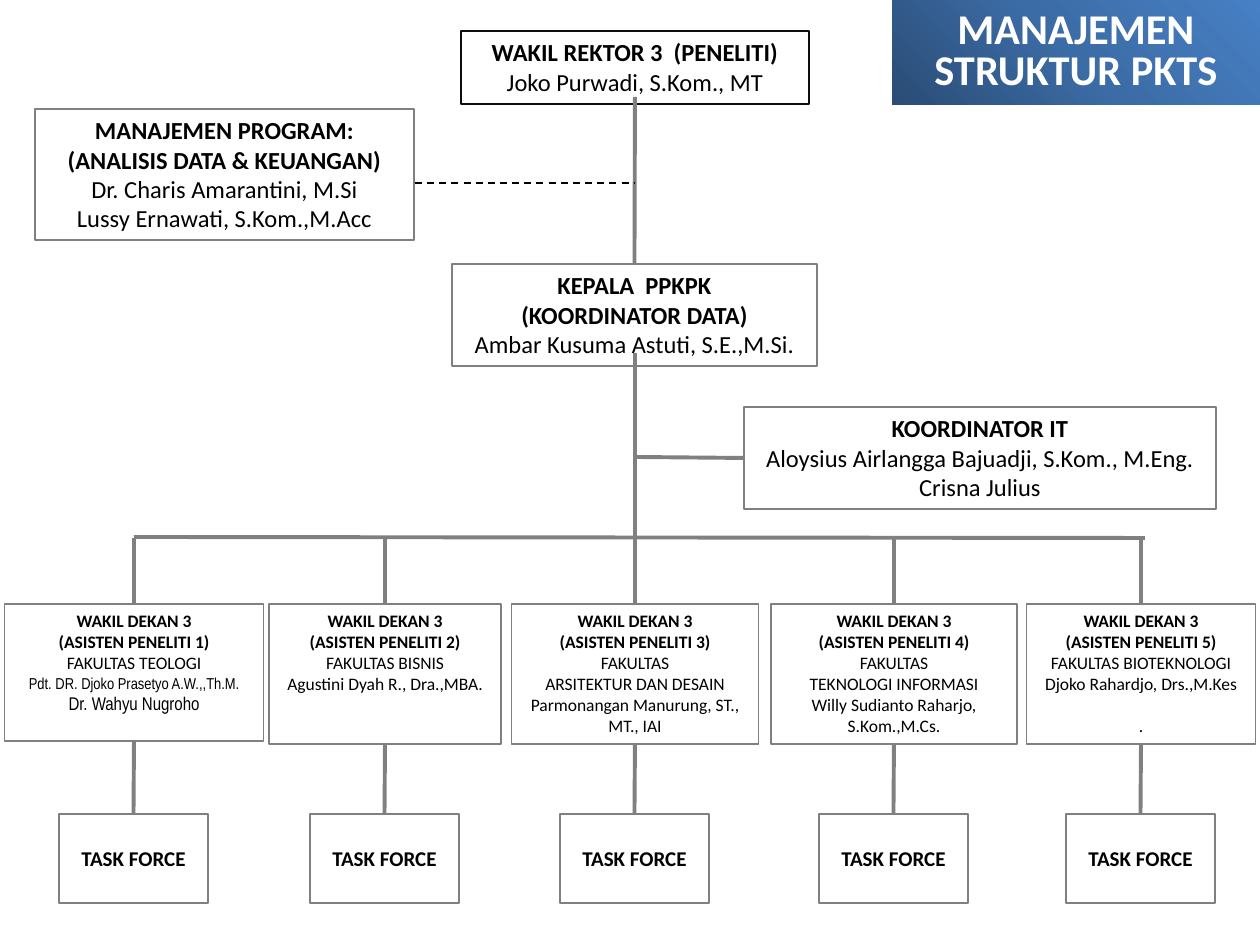
"""Builds the organisation chart of the PKTS management structure."""
from lxml import etree
from pptx import Presentation
from pptx import util as u
from pptx.dml.color import RGBColor
from pptx.enum import dml, shapes, text
from pptx.oxml import parse_xml
from pptx.oxml.ns import nsdecls, qn

PX = 914400 / 126
BLACK = RGBColor(0x00, 0x00, 0x00)
INK = RGBColor(0x0D, 0x0D, 0x0D)
GREY = RGBColor(0x80, 0x80, 0x80)
WHITE = RGBColor(0xFF, 0xFF, 0xFF)
BLUES = [(0, RGBColor(0x2A, 0x4C, 0x75)), (50, RGBColor(0x3C, 0x6C, 0xA6)),
         (100, RGBColor(0x47, 0x80, 0xC5))]
TOP, LEFT, BOTTOM = 0, 1, 2


def px(*values):
    return [u.Emu(round(v * PX)) for v in values]


class Chart:
    """Holds the style and the current slide."""

    font = "Calibri"

    def __init__(self, prs):
        self.slide = prs.slides.add_slide(prs.slide_layouts[5])

    def para(self, tf, words, size, bold=False, font=None, color=BLACK, before=0):
        p = tf.paragraphs[0] if not tf.text else tf.add_paragraph()
        p.alignment = text.PP_ALIGN.CENTER
        p.space_before = u.Pt(before)
        r = p.add_run()
        r.text = words
        r.font.name = font or self.font
        r.font.size, r.font.bold = u.Pt(size), bold
        r.font.color.rgb = color
        return p

    def title(self, rect, words):
        sp = self.slide.shapes.title
        sp.left, sp.top, sp.width, sp.height = px(*rect)
        stops = "".join(f'<a:gs pos="{pos * 1000}"><a:srgbClr val="{color}"/></a:gs>'
                        for pos, color in BLUES)
        sp._element.spPr.append(parse_xml(
            f'<a:gradFill {nsdecls("a")} rotWithShape="1"><a:gsLst>{stops}</a:gsLst>'
            '<a:path path="circle"><a:fillToRect t="100000" r="100000"/></a:path>'
            '</a:gradFill>'))
        tf = sp.text_frame
        tf.word_wrap, tf.auto_size = True, text.MSO_AUTO_SIZE.NONE
        tf.vertical_anchor = text.MSO_ANCHOR.MIDDLE
        self.para(tf, words, 24.2, True, color=WHITE).line_spacing = 0.8

    def box(self, rect, heads, names=(), size=14, line=GREY, anchor=text.MSO_ANCHOR.TOP):
        sp = self.slide.shapes.add_shape(shapes.MSO_SHAPE.RECTANGLE, *px(*rect))
        sp.shadow.inherit = False
        sp.fill.solid()
        sp.fill.fore_color.rgb = WHITE
        sp.line.color.rgb, sp.line.width = line, u.Pt(0.75)
        tf = sp.text_frame
        tf.word_wrap, tf.vertical_anchor = True, anchor
        for words in heads:
            self.para(tf, words, size, True)
        for words in names:
            self.para(tf, words, size)
        return sp

    def line(self, x1, y1, x2, y2, begin=None, end=None, color=GREY, width=2.25, dash=None):
        c = self.slide.shapes.add_connector(
            shapes.MSO_CONNECTOR.STRAIGHT, *px(x1, y1, x2, y2))
        c.line.color.rgb, c.line.width = color, u.Pt(width)
        if dash:
            c.line.dash_style = dash
        etree.SubElement(c._element.spPr, qn("a:effectLst"))
        if begin:
            c.begin_connect(*begin)
        if end:
            c.end_connect(*end)


DEANS = [
    (134, 259, 137, ["FAKULTAS TEOLOGI"]),
    (385, 232, 140, ["FAKULTAS BISNIS", "Agustini Dyah R., Dra.,MBA."]),
    (635, 247, 140, ["FAKULTAS", "ARSITEKTUR DAN DESAIN",
                     "Parmonangan Manurung, ST., MT., IAI"]),
    (894, 246, 140, ["FAKULTAS", "TEKNOLOGI INFORMASI",
                     "Willy Sudianto Raharjo, S.Kom.,M.Cs."]),
    (1141, 229, 140, ["FAKULTAS BIOTEKNOLOGI", "Djoko Rahardjo, Drs.,M.Kes"]),
]


def main():
    prs = Presentation()
    prs.slide_width, prs.slide_height = px(1260, 945)
    chart = Chart(prs)
    chart.title((892, 0, 368, 105), "MANAJEMEN STRUKTUR PKTS")

    chart.box((35, 109, 379, 131), ["MANAJEMEN PROGRAM:", "(ANALISIS DATA & KEUANGAN)"],
              ["Dr. Charis Amarantini, M.Si", "Lussy Ernawati, S.Kom.,M.Acc"])
    chart.box((461, 31, 348, 73), ["WAKIL REKTOR 3  (PENELITI)"],
              ["Joko Purwadi, S.Kom., MT"], line=INK)
    head = chart.box((452, 264, 365, 102), ["KEPALA  PPKPK", "(KOORDINATOR DATA)"],
                     ["Ambar Kusuma Astuti, S.E.,M.Si."])
    it = chart.box((744, 407, 472, 102), ["KOORDINATOR IT"],
                   ["Aloysius Airlangga Bajuadji, S.Kom., M.Eng.", "Crisna Julius"])

    chart.line(635, 97, 635, 264, end=(head, TOP))
    chart.line(415, 183, 634, 183, color=BLACK, width=1, dash=dml.MSO_LINE.DASH)
    chart.line(636, 457, 744, 458, end=(it, LEFT))
    chart.line(134, 537, 1145, 538)

    deans = []
    for number, (cx, width, height, names) in enumerate(DEANS, 1):
        dean = chart.box((cx - width / 2, 604, width, height),
                         ["WAKIL DEKAN 3", f"(ASISTEN PENELITI {number})"], names, 10)
        task = chart.box((cx - 75, 814, 149, 89), ["TASK FORCE"], size=12,
                         anchor=text.MSO_ANCHOR.MIDDLE)
        start = 353 if cx == 635 else 538
        chart.line(cx, start, cx, 604, end=(dean, TOP))
        chart.line(cx, 604 + height, cx, 814, (dean, BOTTOM), (task, TOP))
        deans.append(dean.text_frame)

    chart.para(deans[0], "Pdt. DR. Djoko Prasetyo A.W.,,Th.M.", 9, font="Arial Narrow")
    chart.para(deans[0], "Dr. Wahyu Nugroho", 10.5, font="Arial Narrow")
    chart.para(deans[-1], ".", 10, before=12)
    prs.save("out.pptx")


if __name__ == "__main__":
    main()
